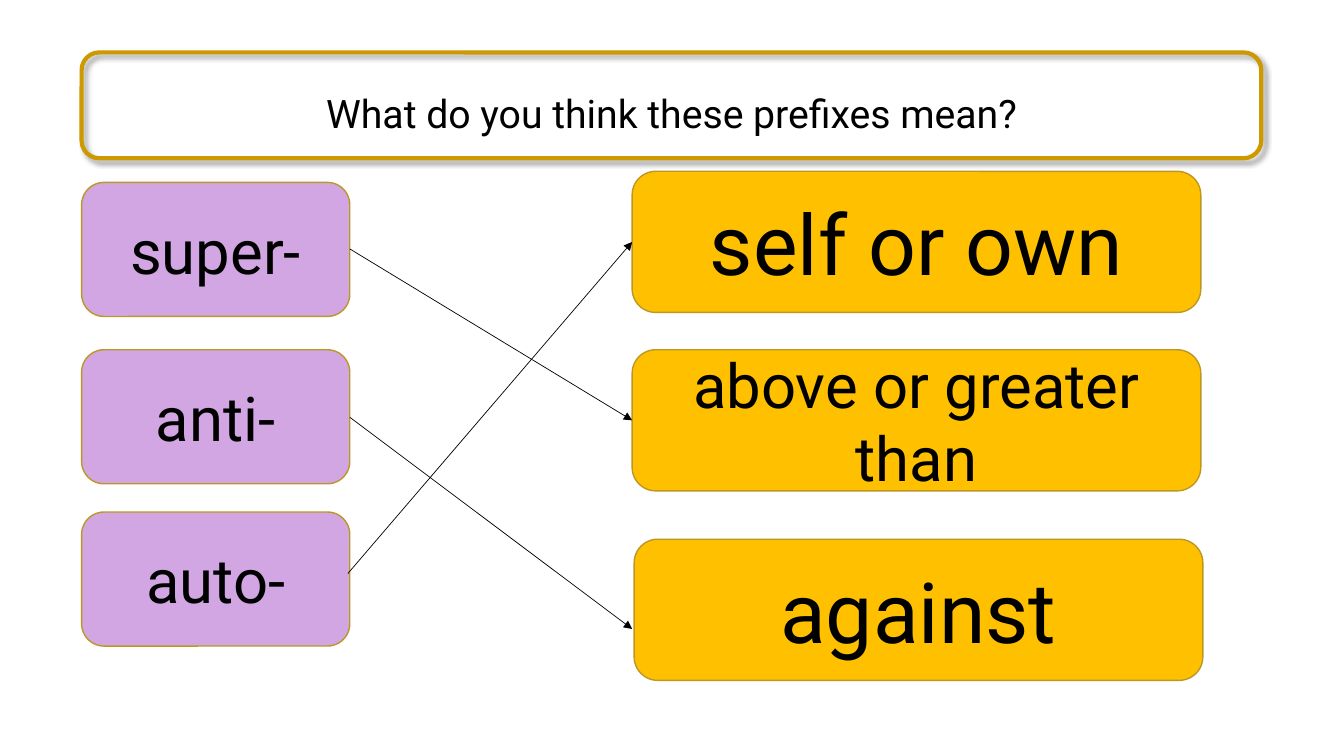
from dataclasses import dataclass

import lxml.etree
import pptx
import pptx.dml.color
import pptx.enum.shapes
import pptx.enum.text
import pptx.oxml
import pptx.oxml.ns
import pptx.util

Inches = pptx.util.Inches
COLOURS = {
    "ink": "000000",
    "frame": "CC9900",
    "outline": "BD9726",
    "prefix": "D1A6E2",
    "meaning": "FFC000",
}
FONT = "Roboto"
PREFIX_SIZE = (2.66, 1.33)
MEANING_SIZE = (5.64, 1.4)


@dataclass(frozen=True)
class Card:
    text: str
    left: float
    top: float
    size: tuple[float, float]
    fill: str
    points: int


@dataclass(frozen=True)
class Match:
    """An arrow from a prefix to its meaning."""
    start: tuple[float, float]
    end: tuple[float, float]


CARDS = [
    Card("super-", 0.81, 1.81, PREFIX_SIZE, "prefix", 44),
    Card("anti-", 0.81, 3.47, PREFIX_SIZE, "prefix", 44),
    Card("auto-", 0.81, 5.08, PREFIX_SIZE, "prefix", 44),
    Card("against", 6.29, 5.35, MEANING_SIZE, "meaning", 60),
    Card("above or greater than", 6.27, 3.47, MEANING_SIZE, "meaning", 44),
    Card("self or own", 6.27, 1.7, MEANING_SIZE, "meaning", 60),
]
MATCHES = [
    Match((3.47, 2.47), (6.27, 4.17)),
    Match((3.47, 4.14), (6.27, 6.24)),
    Match((3.45, 5.69), (6.27, 2.4)),
]


def colour(name: str) -> pptx.dml.color.RGBColor:
    return pptx.dml.color.RGBColor.from_string(COLOURS[name])


def write_text(shape, text: str, points: int) -> None:
    frame = shape.text_frame
    frame.word_wrap = True
    para = frame.paragraphs[0]
    para.alignment = pptx.enum.text.PP_ALIGN.CENTER
    span = para.add_run()
    span.text = text
    span.font.name = FONT
    span.font.size = pptx.util.Pt(points)
    span.font.color.rgb = colour("ink")


def add_rounded(page, left: float, top: float, width: float, height: float,
                line: str, line_width: float):
    box = page.shapes.add_shape(
        pptx.enum.shapes.MSO_SHAPE.ROUNDED_RECTANGLE,
        Inches(left), Inches(top), Inches(width), Inches(height))
    box.shadow.inherit = False
    box.line.color.rgb = colour(line)
    box.line.width = pptx.util.Pt(line_width)
    return box


def add_heading(page, text: str) -> None:
    frame = add_rounded(page, 0.81, 0.52, 11.7, 1.05, "frame", 3)
    frame.fill.background()
    effects = frame._element.spPr.find(pptx.oxml.ns.qn("a:effectLst"))
    effects.append(pptx.oxml.parse_xml(
        f'<a:outerShdw {pptx.oxml.ns.nsdecls("a")} blurRad="{pptx.util.Pt(4)}" '
        f'dist="{pptx.util.Pt(3)}" dir="{45 * 60000}" algn="tl" rotWithShape="0">'
        f'<a:srgbClr val="{COLOURS["ink"]}"><a:alpha val="40000"/></a:srgbClr>'
        '</a:outerShdw>'))
    box = page.shapes.add_textbox(
        Inches(1.04), Inches(0.84), Inches(11.24), Inches(0.57))
    write_text(box, text, 28)
    box.text_frame.auto_size = pptx.enum.text.MSO_AUTO_SIZE.SHAPE_TO_FIT_TEXT


def add_card(page, card: Card) -> None:
    box = add_rounded(page, card.left, card.top, *card.size, "outline", 1)
    box.fill.solid()
    box.fill.fore_color.rgb = colour(card.fill)
    box.text_frame.vertical_anchor = pptx.enum.text.MSO_ANCHOR.MIDDLE
    write_text(box, card.text, card.points)


def add_arrow(page, match: Match) -> None:
    arrow = page.shapes.add_connector(
        pptx.enum.shapes.MSO_CONNECTOR.STRAIGHT,
        *map(Inches, match.start + match.end))
    arrow.line.color.rgb = colour("ink")
    arrow.line.width = pptx.util.Pt(0.5)
    qn = pptx.oxml.ns.qn
    lxml.etree.SubElement(arrow.line._get_or_add_ln(), qn("a:tailEnd"), type="triangle")
    lxml.etree.SubElement(arrow._element.spPr, qn("a:effectLst"))


def main() -> None:
    deck = pptx.Presentation()
    deck.slide_width = Inches(13.33)
    deck.slide_height = Inches(7.5)
    page = deck.slides.add_slide(deck.slide_layouts[6])
    add_heading(page, "What do you think these prefixes mean?")
    for card in CARDS:
        add_card(page, card)
    for match in MATCHES:
        add_arrow(page, match)
    deck.save("out.pptx")


if __name__ == "__main__":
    main()
